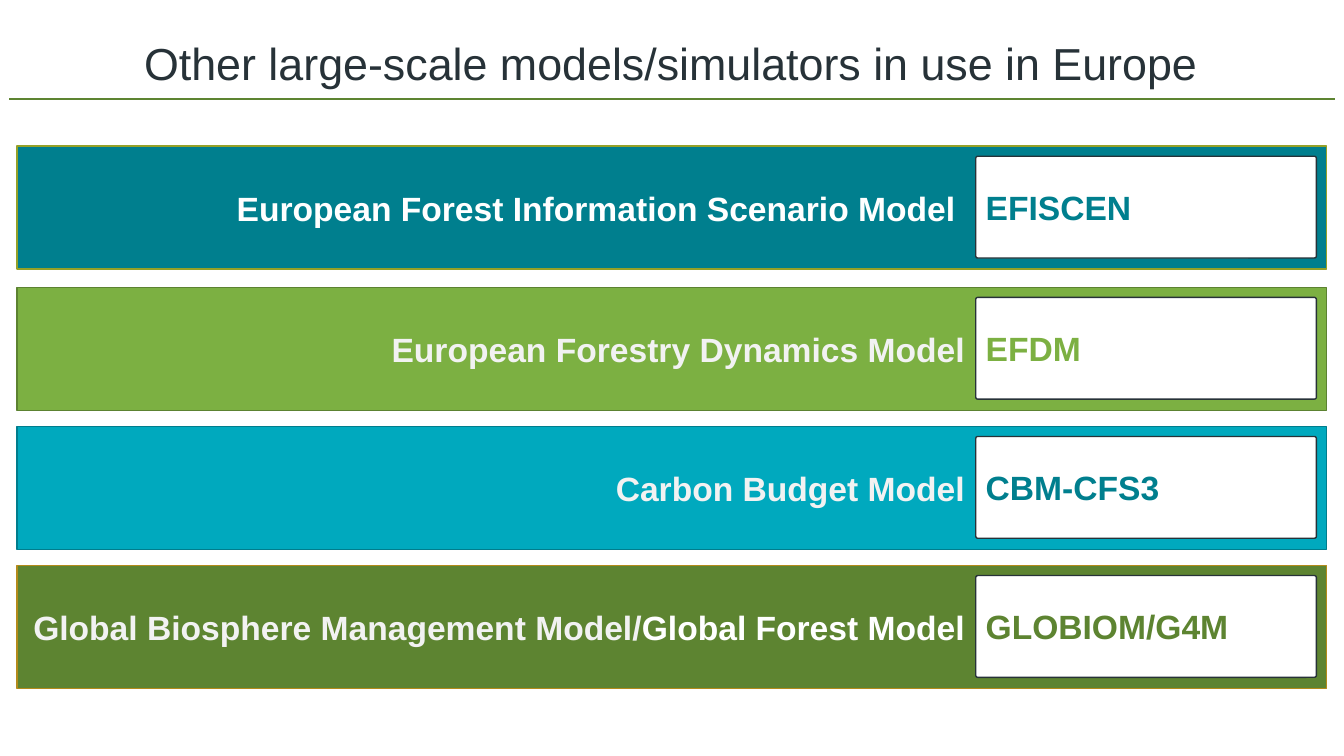
from dataclasses import dataclass

from lxml import etree
from pptx import Presentation
from pptx import util as u
from pptx.dml import color
from pptx.enum import shapes, text
from pptx.oxml import ns

COLORS = {
    "ink": "273238",
    "white": "FFFFFF",
    "pale": "F2F2F2",
    "teal": "007F8E",
    "deep_teal": "007D8D",
    "lime": "7CB042",
    "cyan": "00A9BE",
    "forest": "5D8431",
    "dark_forest": "5C8231",
    "olive": "95A128",
    "gold": "B38B1B",
}
BAND_LEFT, BAND_WIDTH, BAND_HEIGHT = 12.24, 935.28, 87.84
CARD_LEFT, CARD_WIDTH, CARD_HEIGHT = 696.96, 243.36, 72.72
CARD_INSET = 7.2
NAME_WIDTH, LABEL_HEIGHT = 684, 36
NAME_DROP, ACRONYM_DROP = 26.28, 25.56


@dataclass(frozen=True)
class Model:
    top: float
    name: list[tuple[str, str]]
    acronym: str
    fill: str
    border: str
    accent: str


MODELS = [
    Model(104.4, [("European Forest Information Scenario Model ", "white")],
          "EFISCEN", "teal", "olive", "teal"),
    Model(205.2, [("European Forestry Dynamics Model", "pale")],
          "EFDM", "lime", "dark_forest", "lime"),
    Model(304.56, [("Carbon Budget Model", "pale")],
          "CBM-CFS3", "cyan", "deep_teal", "teal"),
    Model(403.92, [("Global Biosphere Management Model/", "pale"),
                   ("Global Forest Model", "white")],
          "GLOBIOM/G4M", "forest", "gold", "forest"),
]


def rgb(name: str) -> color.RGBColor:
    return color.RGBColor.from_string(COLORS[name])


def add_text(slide, runs: list[tuple[str, str]], *, left: float, top: float,
             width: float, height: float = LABEL_HEIGHT, size: float = 24,
             bold: bool = True, align=text.PP_ALIGN.LEFT,
             before: float = 2) -> None:
    label = slide.shapes.add_textbox(u.Pt(left), u.Pt(top), u.Pt(width), u.Pt(height))
    frame = label.text_frame
    frame.word_wrap = True
    frame.auto_size = text.MSO_AUTO_SIZE.SHAPE_TO_FIT_TEXT
    paragraph = frame.paragraphs[0]
    paragraph.alignment = align
    paragraph.space_before = u.Pt(before)
    for words, tint in runs:
        run = paragraph.add_run()
        run.text = words
        run.font.name = "Arial"
        run.font.size = u.Pt(size)
        run.font.bold = bold
        run.font.color.rgb = rgb(tint)


def add_panel(slide, kind: shapes.MSO_SHAPE, left: float, top: float,
              width: float, height: float, fill: str, border: str):
    panel = slide.shapes.add_shape(kind, u.Pt(left), u.Pt(top), u.Pt(width), u.Pt(height))
    panel.shadow.inherit = False
    panel.fill.solid()
    panel.fill.fore_color.rgb = rgb(fill)
    panel.line.color.rgb = rgb(border)
    panel.line.width = u.Pt(1)
    return panel


def add_title(slide) -> None:
    add_text(slide, [("Other large-scale models/simulators in use in Europe", "ink")],
             left=64.8, top=22.32, width=829.44, height=46.08, size=32,
             bold=False, align=text.PP_ALIGN.CENTER, before=0)
    title_rule = slide.shapes.add_connector(
        shapes.MSO_CONNECTOR.STRAIGHT, u.Pt(6.48), u.Pt(70.56), u.Pt(953.28), u.Pt(70.56))
    title_rule.line.color.rgb = rgb("forest")
    title_rule.line.width = u.Pt(1.5)
    etree.SubElement(title_rule._element.spPr, ns.qn("a:effectLst"))


def add_model(slide, model: Model) -> None:
    add_panel(slide, shapes.MSO_SHAPE.RECTANGLE, BAND_LEFT, model.top,
              BAND_WIDTH, BAND_HEIGHT, model.fill, model.border)
    card = add_panel(slide, shapes.MSO_SHAPE.ROUNDED_RECTANGLE, CARD_LEFT,
                     model.top + CARD_INSET, CARD_WIDTH, CARD_HEIGHT, "white", "ink")
    card.adjustments[0] = 0.02
    add_text(slide, model.name, left=BAND_LEFT, top=model.top + NAME_DROP,
             width=NAME_WIDTH, align=text.PP_ALIGN.RIGHT)
    add_text(slide, [(model.acronym, model.accent)], left=CARD_LEFT,
             top=model.top + ACRONYM_DROP, width=CARD_WIDTH)


def main() -> None:
    deck = Presentation()
    deck.slide_width, deck.slide_height = u.Pt(960), u.Pt(540)
    slide = deck.slides.add_slide(deck.slide_layouts[6])
    add_title(slide)
    for model in MODELS:
        add_model(slide, model)
    deck.save("out.pptx")


if __name__ == "__main__":
    main()
